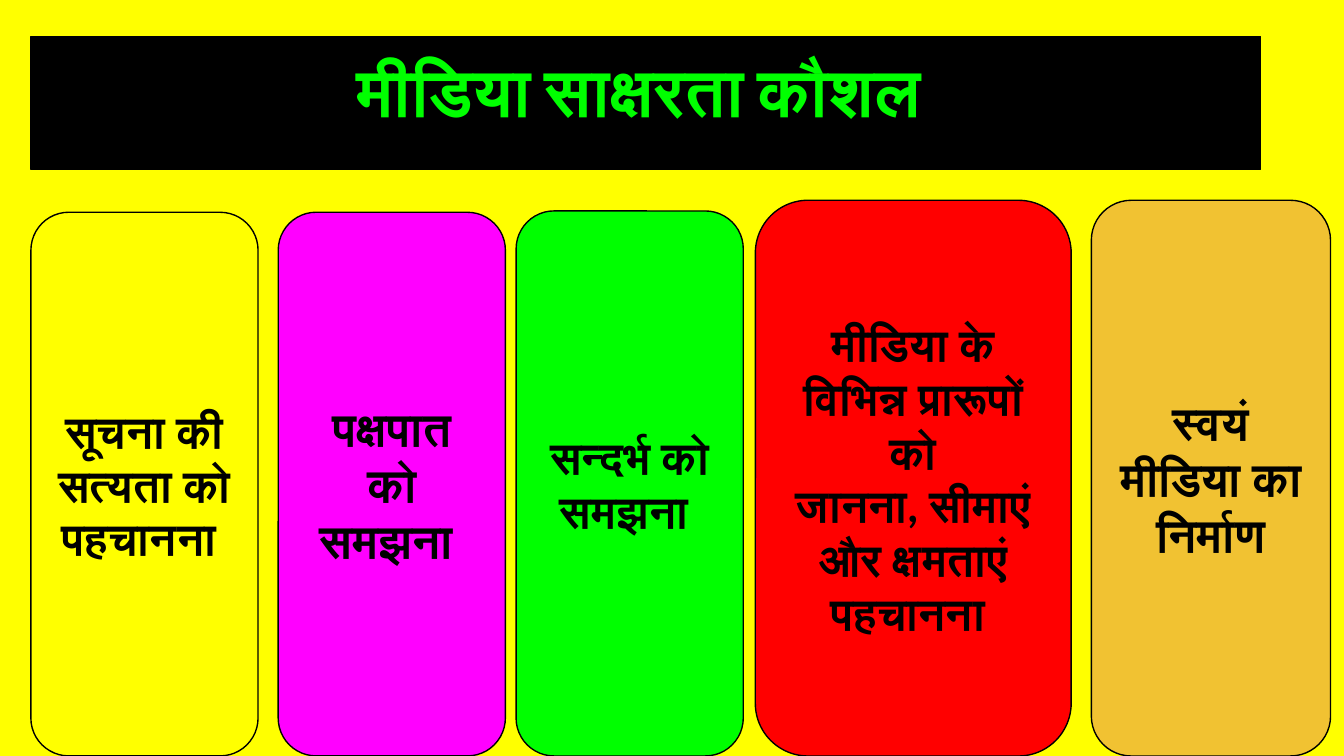
from dataclasses import dataclass

from pptx import Presentation, util as u
from pptx.dml.color import RGBColor
from pptx.enum import shapes, text
from pptx.oxml.ns import qn


@dataclass(frozen=True)
class Theme:
    yellow: str = "FFFF00"
    black: str = "000000"
    magenta: str = "FF00FF"
    green: str = "00FF00"
    red: str = "FF0000"
    gold: str = "F1C232"
    title_font: str = "Manrope"
    body_font: str = "Lato"
    title_size: int = 36
    body_size: int = 24
    large_size: int = 25
    outline: float = 0.75
    inset: float = 0.1
    corner: float = 0.167


THEME = Theme()
WIDTH = 10
HEIGHT = WIDTH * 9 / 16
MARGIN = 0.23
SKILLS = [
    (MARGIN, 1.58, 1.69, THEME.yellow, THEME.body_size, ["सूचना की सत्यता को पहचानना "]),
    (2.07, 1.58, 1.69, THEME.magenta, THEME.large_size, ["पक्षपात को समझना "]),
    (3.84, 1.57, 1.69, THEME.green, THEME.body_size, ["सन्दर्भ को समझना "]),
    (5.62, 1.49, 2.35, THEME.red, THEME.body_size,
     ["मीडिया के विभिन्न प्रारूपों को", "जानना, सीमाएं और क्षमताएं पहचानना "]),
    (8.12, 1.49, 1.78, THEME.gold, THEME.large_size, ["स्वयं मीडिया का निर्माण"]),
]


def paint(panel, fill):
    panel.fill.solid()
    panel.fill.fore_color.rgb = RGBColor.from_string(fill)
    panel.line.color.rgb = RGBColor.from_string(THEME.black)
    panel.line.width = u.Pt(THEME.outline)


def write(panel, lines, font, size, color, anchor):
    frame = panel.text_frame
    frame.word_wrap = True
    frame.auto_size = text.MSO_AUTO_SIZE.NONE
    frame.vertical_anchor = anchor
    frame.margin_left = frame.margin_right = u.Inches(THEME.inset)
    frame.margin_top = frame.margin_bottom = u.Inches(THEME.inset)
    for index, line in enumerate(lines):
        paragraph = frame.add_paragraph() if index else frame.paragraphs[0]
        paragraph.alignment = text.PP_ALIGN.CENTER
        paragraph.space_before = u.Pt(0)
        run = paragraph.add_run()
        run.text = line
        run.font.name = font
        run.font.size = u.Pt(size)
        run.font.bold = True
        run.font.color.rgb = RGBColor.from_string(color)
        script_font = run.font._element.makeelement(qn("a:cs"), {"typeface": font})
        run.font._element.append(script_font)


def add_heading(slide, heading):
    banner = slide.shapes.title
    banner.left, banner.top = u.Inches(MARGIN), u.Inches(0.27)
    banner.width, banner.height = u.Inches(9.15), u.Inches(0.99)
    paint(banner, THEME.black)
    write(banner, [heading], THEME.title_font, THEME.title_size, THEME.green,
          text.MSO_ANCHOR.TOP)
    banner.text_frame.paragraphs[0].space_after = u.Pt(16)


def add_skill(slide, left, top, width, fill, size, lines):
    card = slide.shapes.add_shape(
        shapes.MSO_SHAPE.ROUNDED_RECTANGLE,
        u.Inches(left), u.Inches(top), u.Inches(width), u.Inches(HEIGHT - top))
    card.adjustments[0] = THEME.corner
    card.shadow.inherit = False
    paint(card, fill)
    write(card, lines, THEME.body_font, size, THEME.black, text.MSO_ANCHOR.MIDDLE)


def main():
    deck = Presentation()
    deck.slide_width, deck.slide_height = u.Inches(WIDTH), u.Inches(HEIGHT)
    slide = deck.slides.add_slide(deck.slide_layouts.get_by_name("Title Only"))
    slide.background.fill.solid()
    slide.background.fill.fore_color.rgb = RGBColor.from_string(THEME.yellow)
    add_heading(slide, "मीडिया साक्षरता कौशल ")
    for skill in SKILLS:
        add_skill(slide, *skill)
    deck.save("out.pptx")


if __name__ == "__main__":
    main()
